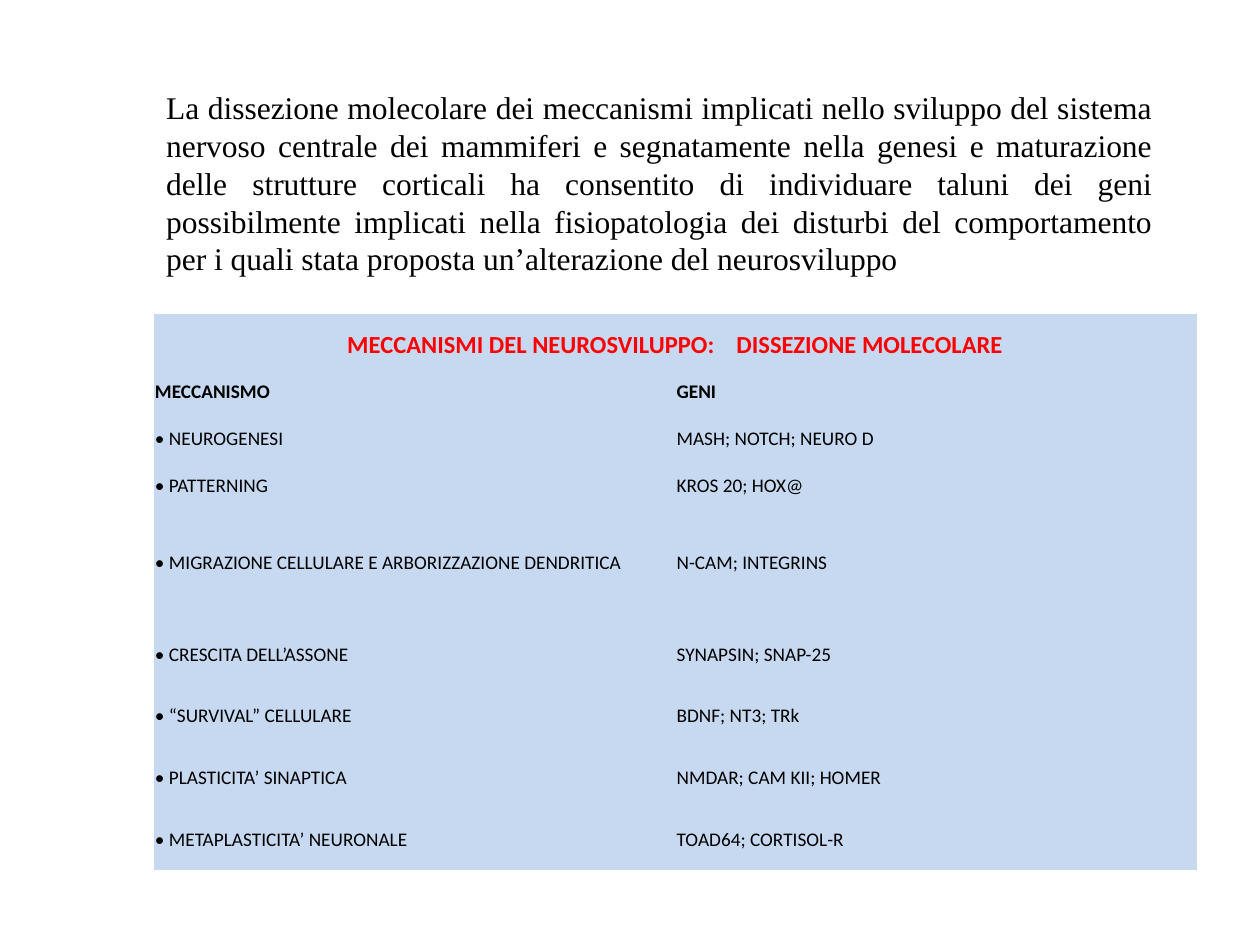
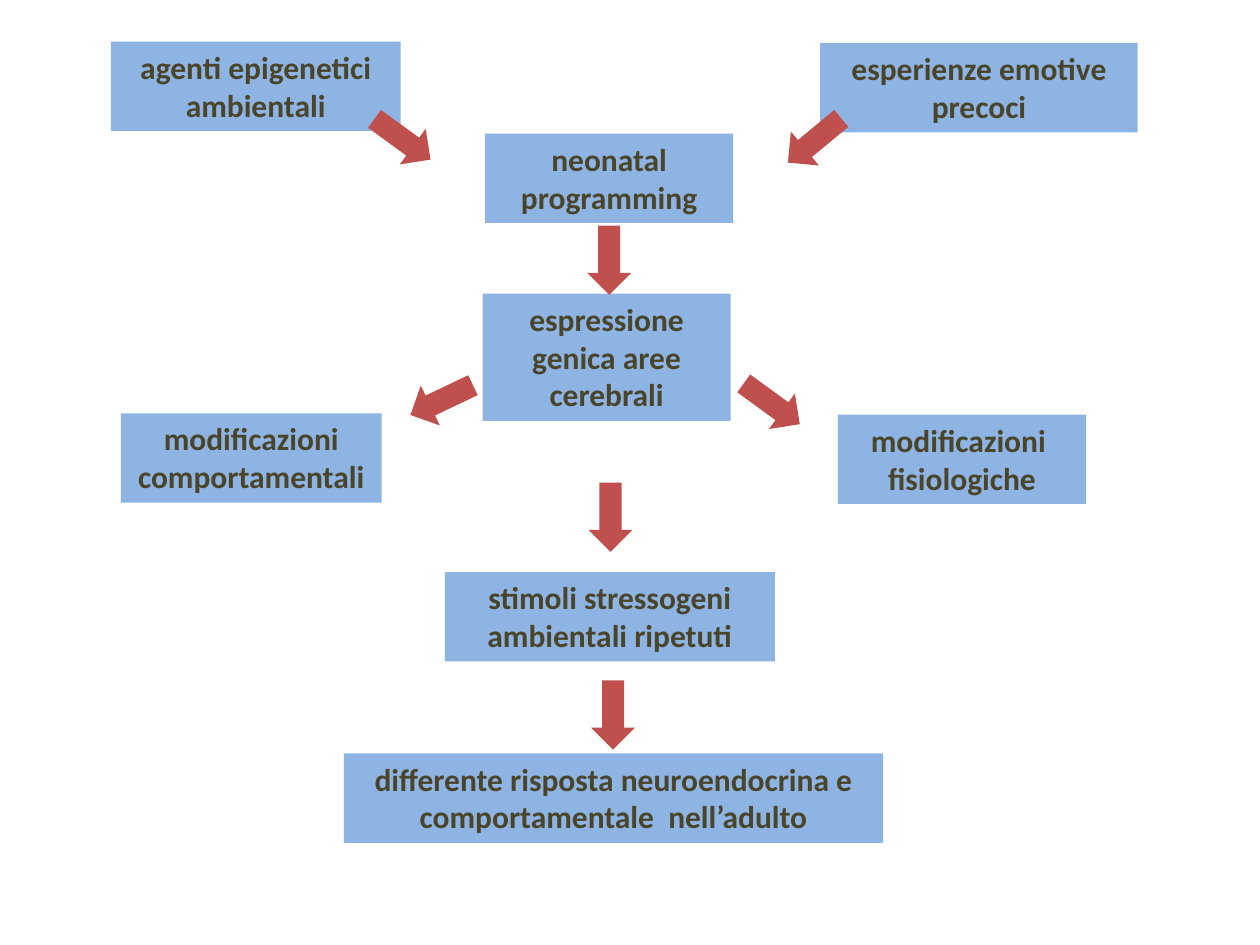
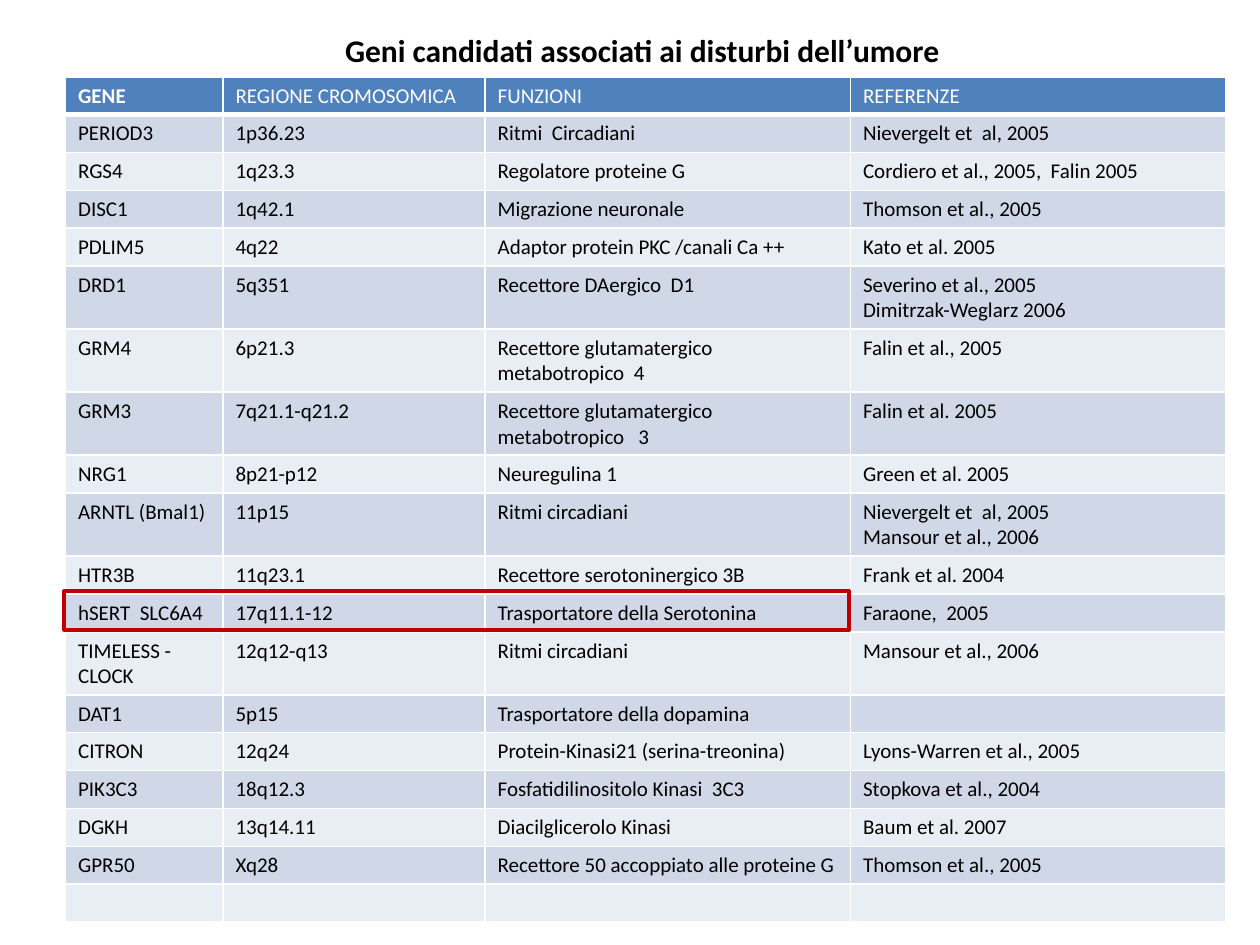
from dataclasses import dataclass

from lxml.etree import SubElement
from pptx import Presentation
from pptx.dml.color import RGBColor
from pptx.enum.shapes import MSO_SHAPE
from pptx.enum.text import MSO_ANCHOR, PP_ALIGN
from pptx.oxml.ns import qn
from pptx.util import Inches, Pt


@dataclass(frozen=True)
class Theme:
    """Colours, fonts and type sizes shared by the slides."""
    black: str = "000000"
    white: str = "FFFFFF"
    red: str = "FF0000"
    pale_blue: str = "C6D9F1"
    step_blue: str = "8EB4E3"
    step_text: str = "4A452A"
    arrow_red: str = "C0504D"
    header_blue: str = "4F81BD"
    band_dark: str = "D0D8E8"
    band_light: str = "E9EDF4"
    highlight: str = "C00000"
    sans: str = "Calibri"
    serif: str = "Times New Roman"
    large: int = 18
    heading: int = 14
    body: int = 12
    small: int = 11
    plain_table: str = "{2D5ABB26-0587-4C30-8999-92F81FD0307C}"


@dataclass(frozen=True)
class Box:
    """A rectangle in inches."""
    left: float
    top: float
    width: float
    height: float

    def inside(self, left, top, width, height):
        """Return a box placed relative to this one."""
        return Box(self.left + left, self.top + top, width, height)

    def lengths(self):
        """Return the four lengths for a shape call."""
        return [Inches(round(side, 2)) for side in (self.left, self.top, self.width, self.height)]


THEME = Theme()

MECHANISMS = [
    ("MECCANISMO", "GENI", 0.26),
    ("• NEUROGENESI", "MASH; NOTCH; NEURO D", 0.49),
    ("• PATTERNING", "KROS 20; HOX@", 0.26),
    ("• MIGRAZIONE CELLULARE E ARBORIZZAZIONE DENDRITICA", "N-CAM; INTEGRINS", 0.96),
    ("• CRESCITA DELL’ASSONE", "SYNAPSIN; SNAP-25", 0.49),
    ("• “SURVIVAL” CELLULARE", "BDNF; NT3; TRk", 0.49),
    ("• PLASTICITA’ SINAPTICA", "NMDAR; CAM KII; HOMER", 0.49),
    ("• METAPLASTICITA’ NEURONALE", "TOAD64; CORTISOL-R", 0.49),
]

STEPS = [
    ("modificazioni comportamentali", 0.08, 2.95, 2.07, 0.71),
    ("modificazioni  fisiologiche", 5.77, 2.96, 1.97, 0.71),
    ("agenti epigenetici ambientali", 0, 0, 2.3, 0.71),
    ("neonatal programming", 2.97, 0.73, 1.97, 0.71),
    ("espressione genica aree cerebrali", 2.95, 2, 1.97, 1.01),
    ("esperienze emotive precoci", 5.63, 0.01, 2.52, 0.71),
    ("differente risposta neuroendocrina e comportamentale  nell’adulto", 1.85, 5.65, 4.28, 0.71),
    ("stimoli stressogeni ambientali ripetuti", 2.65, 4.21, 2.62, 0.71),
]

ARROWS = [
    (2.04, 0.6, 36),
    (5.31, 0.61, 140.4),
    (3.68, 1.56, 90),
    (2.35, 2.67, 154.5),
    (4.97, 2.7, 36),
    (3.69, 3.6, 90),
    (3.71, 5.17, 90),
]

GENES = [
    ("GENE", "REGIONE CROMOSOMICA", "FUNZIONI", "REFERENZE"),
    ("PERIOD3", "1p36.23", "Ritmi  Circadiani", "Nievergelt et  al, 2005"),
    ("RGS4", "1q23.3", "Regolatore proteine G", "Cordiero et al., 2005,  Falin 2005"),
    ("DISC1", "1q42.1", "Migrazione neuronale", "Thomson et al., 2005"),
    ("PDLIM5", "4q22", "Adaptor protein PKC /canali Ca ++", "Kato et al. 2005"),
    ("DRD1", "5q351", "Recettore DAergico  D1", "Severino et al., 2005\nDimitrzak-Weglarz 2006"),
    ("GRM4", "6p21.3", "Recettore glutamatergico metabotropico  4", "Falin et al., 2005"),
    ("GRM3", "7q21.1-q21.2", "Recettore glutamatergico metabotropico   3", "Falin et al. 2005"),
    ("NRG1", "8p21-p12", "Neuregulina 1", "Green et al. 2005"),
    ("ARNTL (Bmal1)", "11p15", "Ritmi circadiani", "Nievergelt et  al, 2005\nMansour et al., 2006"),
    ("HTR3B", "11q23.1", "Recettore serotoninergico 3B", "Frank et al. 2004"),
    ("hSERT  SLC6A4", "17q11.1-12", "Trasportatore della Serotonina", "Faraone,  2005"),
    ("TIMELESS - CLOCK", "12q12-q13", "Ritmi circadiani", "Mansour et al., 2006"),
    ("DAT1", "5p15", "Trasportatore della dopamina", ""),
    ("CITRON", "12q24", "Protein-Kinasi21 (serina-treonina)", "Lyons-Warren et al., 2005"),
    ("PIK3C3", "18q12.3", "Fosfatidilinositolo Kinasi  3C3", "Stopkova et al., 2004"),
    ("DGKH", "13q14.11", "Diacilglicerolo Kinasi", "Baum et al. 2007"),
    ("GPR50", "Xq28", "Recettore 50 accoppiato alle proteine G", "Thomson et al., 2005"),
    ("", "", "", ""),
]
TWO_LINE_GENES = {"DRD1", "GRM4", "GRM3", "ARNTL (Bmal1)", "TIMELESS - CLOCK"}
HIGHLIGHTED_GENE = "hSERT  SLC6A4"


def paint(target, colour):
    """Give a shape or cell a solid fill."""
    target.fill.solid()
    target.fill.fore_color.rgb = RGBColor.from_string(colour)


def write(frame, text, size, colour=THEME.black, bold=False, align=PP_ALIGN.LEFT, font=THEME.sans):
    """Write each line of the text as a paragraph of one run."""
    frame.word_wrap = True
    for index, line in enumerate(text.split("\n")):
        para = frame.add_paragraph() if index else frame.paragraphs[0]
        para.alignment = align
        if not line:
            SubElement(para._p, qn("a:endParaRPr"), sz=str(size * 100))
            continue
        span = para.add_run()
        span.text = line
        span.font.name = font
        span.font.size = Pt(size)
        span.font.bold = bold
        span.font.color.rgb = RGBColor.from_string(colour)


def add_text(page, box, text, **style):
    """Add a wrapping text box and return its frame."""
    frame = page.shapes.add_textbox(*box.lengths()).text_frame
    write(frame, text, THEME.large, **style)
    return frame


def add_shape(page, kind, box):
    """Add a preset shape without shadow or outline."""
    shape = page.shapes.add_shape(kind, *box.lengths())
    shape.shadow.inherit = False
    shape.line.fill.background()
    return shape


def add_grid(page, box, widths, heights):
    """Add an unstyled table with the given column widths and row heights."""
    table = page.shapes.add_table(len(heights), len(widths), *box.lengths()).table
    table.first_row = table.horz_banding = False
    table._tbl.tblPr.find(qn("a:tableStyleId")).text = THEME.plain_table
    for column, width in zip(table.columns, widths):
        column.width = Inches(width)
    for row, height in zip(table.rows, heights):
        row.height = Inches(height)
    return table


def add_borders(cell, top, bottom):
    """Draw white cell borders, with the top and bottom widths in points."""
    for side, width in (("L", 1), ("R", 1), ("T", top), ("B", bottom)):
        line = SubElement(cell._tc.get_or_add_tcPr(), qn(f"a:ln{side}"), w=str(Pt(width)))
        SubElement(SubElement(line, qn("a:solidFill")), qn("a:srgbClr"), val=THEME.white)


def add_mechanism_table(page, box):
    """Build the table of mechanisms and genes under one merged heading."""
    heights = [0.49] + [height for _, _, height in MECHANISMS]
    table = add_grid(page, box, [box.width / 2] * 2, heights)
    for cell in table.iter_cells():
        paint(cell, THEME.pale_blue)
        cell.vertical_anchor = MSO_ANCHOR.MIDDLE
        cell.margin_left = cell.margin_right = cell.margin_top = cell.margin_bottom = Inches(0.01)
    heading = table.cell(0, 0)
    heading.merge(table.cell(0, 1))
    write(heading.text_frame, "MECCANISMI DEL NEUROSVILUPPO:    DISSEZIONE MOLECOLARE",
          THEME.heading, THEME.red, True, PP_ALIGN.CENTER)
    for row, (mechanism, genes, _) in enumerate(MECHANISMS, 1):
        for column, text in enumerate((mechanism, genes)):
            write(table.cell(row, column).text_frame, text, THEME.small,
                  bold=row == 1, align=PP_ALIGN.JUSTIFY)


def add_flow(page, box):
    """Build the boxes of the flow and the block arrows between them."""
    for text, *place in STEPS:
        step = add_shape(page, MSO_SHAPE.RECTANGLE, box.inside(*place))
        paint(step, THEME.step_blue)
        step.text_frame.vertical_anchor = MSO_ANCHOR.TOP
        write(step.text_frame, text, THEME.large, THEME.step_text, True, PP_ALIGN.CENTER)
    for left, top, angle in ARROWS:
        arrow = add_shape(page, MSO_SHAPE.RIGHT_ARROW, box.inside(left, top, 0.55, 0.35))
        paint(arrow, THEME.arrow_red)
        arrow.rotation = angle


def add_gene_table(page, box):
    """Build the banded gene table and frame the highlighted gene."""
    widths = [1.25, 2.08, 2.9, 2.98]
    heights = [0.5 if row[0] in TWO_LINE_GENES else 0.3 for row in GENES]
    table = add_grid(page, box, widths, heights)
    for row, texts in enumerate(GENES):
        header = row == 0
        band = THEME.band_dark if row % 2 else THEME.band_light
        for column, text in enumerate(texts):
            cell = table.cell(row, column)
            add_borders(cell, 3 if row == 1 else 1, 3 if header else 1)
            paint(cell, THEME.header_blue if header else band)
            write(cell.text_frame, text, THEME.body, THEME.white if header else THEME.black,
                  header and column == 0)
    marked = [row[0] for row in GENES].index(HIGHLIGHTED_GENE)
    place = box.inside(-0.01, sum(heights[:marked]) - 0.02, sum(widths[:3]), 0.31)
    marker = add_shape(page, MSO_SHAPE.RECTANGLE, place)
    marker.fill.background()
    marker.line.color.rgb = RGBColor.from_string(THEME.highlight)
    marker.line.width = Pt(2)


def build_mechanisms(page):
    """Build the slide on the mechanisms of neurodevelopment."""
    intro = add_text(
        page, Box(1.22, 0.64, 8.03, 1.62),
        "La dissezione molecolare dei meccanismi implicati nello sviluppo del sistema nervoso "
        "centrale dei mammiferi e segnatamente nella genesi e maturazione delle strutture "
        "corticali ha consentito di individuare taluni dei geni possibilmente implicati nella "
        "fisiopatologia dei disturbi del comportamento per i quali stata proposta "
        "un’alterazione del neurosviluppo",
        align=PP_ALIGN.JUSTIFY, font=THEME.serif)
    intro.vertical_anchor = MSO_ANCHOR.MIDDLE
    add_mechanism_table(page, Box(1.22, 2.49, 8.28, 4.44))


def build_programming(page):
    """Build the slide on neonatal programming."""
    add_flow(page, Box(0.88, 0.33, 8.15, 6.36))


def build_genes(page):
    """Build the slide on candidate genes."""
    add_gene_table(page, Box(0.52, 0.61, 9.21, 6.7))
    add_text(page, Box(2.64, 0.2, 5.35, 0.4),
             "Geni candidati associati ai disturbi dell’umore", bold=True)


def main():
    """Build the deck and save it."""
    deck = Presentation()
    deck.slide_width, deck.slide_height = Inches(10), Inches(7.5)
    for build in (build_mechanisms, build_programming, build_genes):
        build(deck.slides.add_slide(deck.slide_layouts[6]))
    deck.save("out.pptx")


if __name__ == "__main__":
    main()
